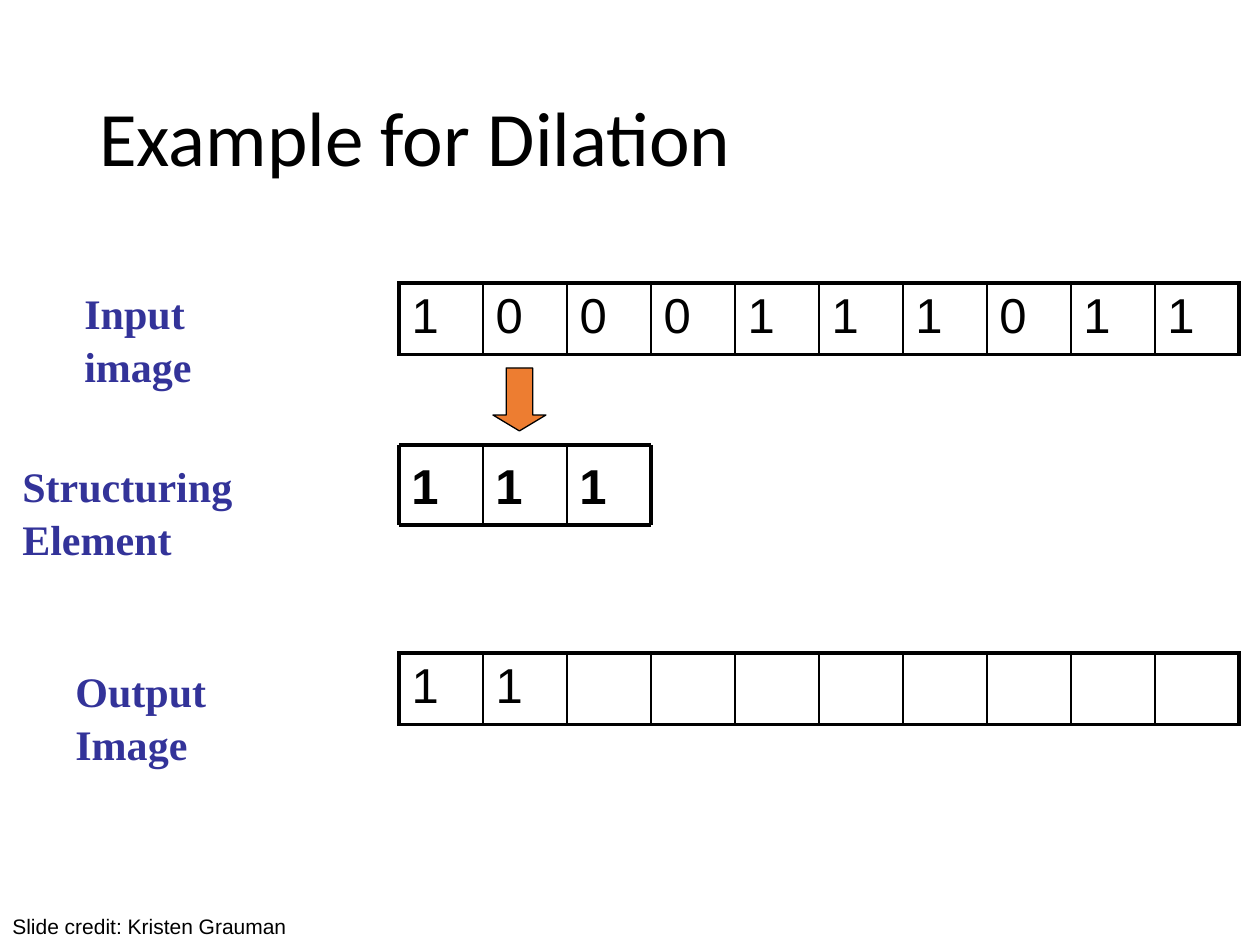
from lxml import etree
from pptx import Presentation
from pptx.dml.color import RGBColor
from pptx.enum.shapes import MSO_CONNECTOR, MSO_SHAPE
from pptx.enum.text import MSO_ANCHOR
from pptx.oxml import parse_xml
from pptx.oxml.ns import nsdecls, qn
from pptx.util import Emu, Pt

LINE = MSO_CONNECTOR.STRAIGHT
ARROW = MSO_SHAPE.DOWN_ARROW
TOP, MID = MSO_ANCHOR.TOP, MSO_ANCHOR.MIDDLE
BLACK, NAVY, ORANGE = "000000", "333399", "ED7D31"
THICK, THIN = 2.25, 1
LEFT, STEP, ROW = 399, 84, 71


def px(n):
    return Emu(round(n * 914400 / 126))


def write(frame, text, size=28, font="Arial", color=BLACK, bold=False,
          space=1, anchor=TOP):
    frame.word_wrap = True
    frame.vertical_anchor = anchor
    par = frame.paragraphs[0]
    par.line_spacing = space
    run = par.add_run()
    run.text = text
    run.font.size = Pt(size)
    run.font.name = font
    run.font.bold = bold
    run.font.color.rgb = RGBColor.from_string(color)


deck = Presentation()
deck.slide_width, deck.slide_height = px(1260), px(945)
slide = deck.slides.add_slide(deck.slide_layouts[6])
shapes = slide.shapes

title = shapes.add_textbox(px(87), px(50), px(1086), px(183))
write(title.text_frame, "Example for Dilation", size=44, font="Calibri",
      space=0.9, anchor=MID)

for top, bits in [(283, "1000111011"), (653, "11")]:
    grid = shapes.add_table(1, 10, px(LEFT), px(top), px(10 * STEP), px(ROW)).table
    grid.first_row = grid.horz_banding = False
    grid.rows[0].height = px(ROW)
    for i in range(10):
        grid.columns[i].width = px(STEP)
        cell = grid.cell(0, i)
        if i < len(bits):
            write(cell.text_frame, bits[i])
        props = cell._tc.get_or_add_tcPr()
        sides = {"lnL": THIN if i else THICK, "lnR": THICK if i == 9 else THIN,
                 "lnT": THICK, "lnB": THICK}
        for side, wide in sides.items():
            props.append(parse_xml(
                f'<a:{side} {nsdecls("a")} w="{Pt(wide)}"><a:solidFill>'
                f'<a:srgbClr val="{BLACK}"/></a:solidFill></a:{side}>'))
        cell.fill.background()

labels = [("Input image", 72, 278, 227, 70),
          ("Structuring Element", 10, 451, 364, 140),
          ("Output Image", 63, 656, 257, 90)]
for text, x, y, wide, inset in labels:
    box = shapes.add_textbox(px(x), px(y), px(wide), px(63))
    box.text_frame.margin_right = px(inset)
    write(box.text_frame, text, size=24, font="Times New Roman", color=NAVY,
          bold=True, space=1.06)

high, low = 445, 525
for i in range(3):
    box = shapes.add_textbox(px(LEFT + i * STEP), px(high), px(STEP), px(low - high))
    box.text_frame.margin_top = px(10)
    write(box.text_frame, "1", bold=True)

right = LEFT + 3 * STEP
rules = [(LEFT, y, right, y, THICK) for y in (high, low)]
for i in range(4):
    x = LEFT + i * STEP
    rules.append((x, high, x, low, THICK if i in (0, 3) else THIN))
for x1, y1, x2, y2, wide in rules:
    rule = shapes.add_connector(LINE, px(x1), px(y1), px(x2), px(y2))
    rule.line.width = Pt(wide)
    rule.line.color.rgb = RGBColor.from_string(BLACK)
    etree.SubElement(rule._element.spPr, qn("a:effectLst"))

arrow = shapes.add_shape(ARROW, px(493), px(368), px(53), px(63))
arrow.adjustments[0], arrow.adjustments[1] = 0.5, 0.3
arrow.shadow.inherit = False
arrow.fill.solid()
arrow.fill.fore_color.rgb = RGBColor.from_string(ORANGE)
arrow.line.color.rgb = RGBColor.from_string(BLACK)
arrow.line.width = Pt(0.75)

credit = shapes.add_textbox(px(0), px(907), px(577), px(38))
write(credit.text_frame, "Slide credit: Kristen Grauman", size=12)

deck.save("out.pptx")
